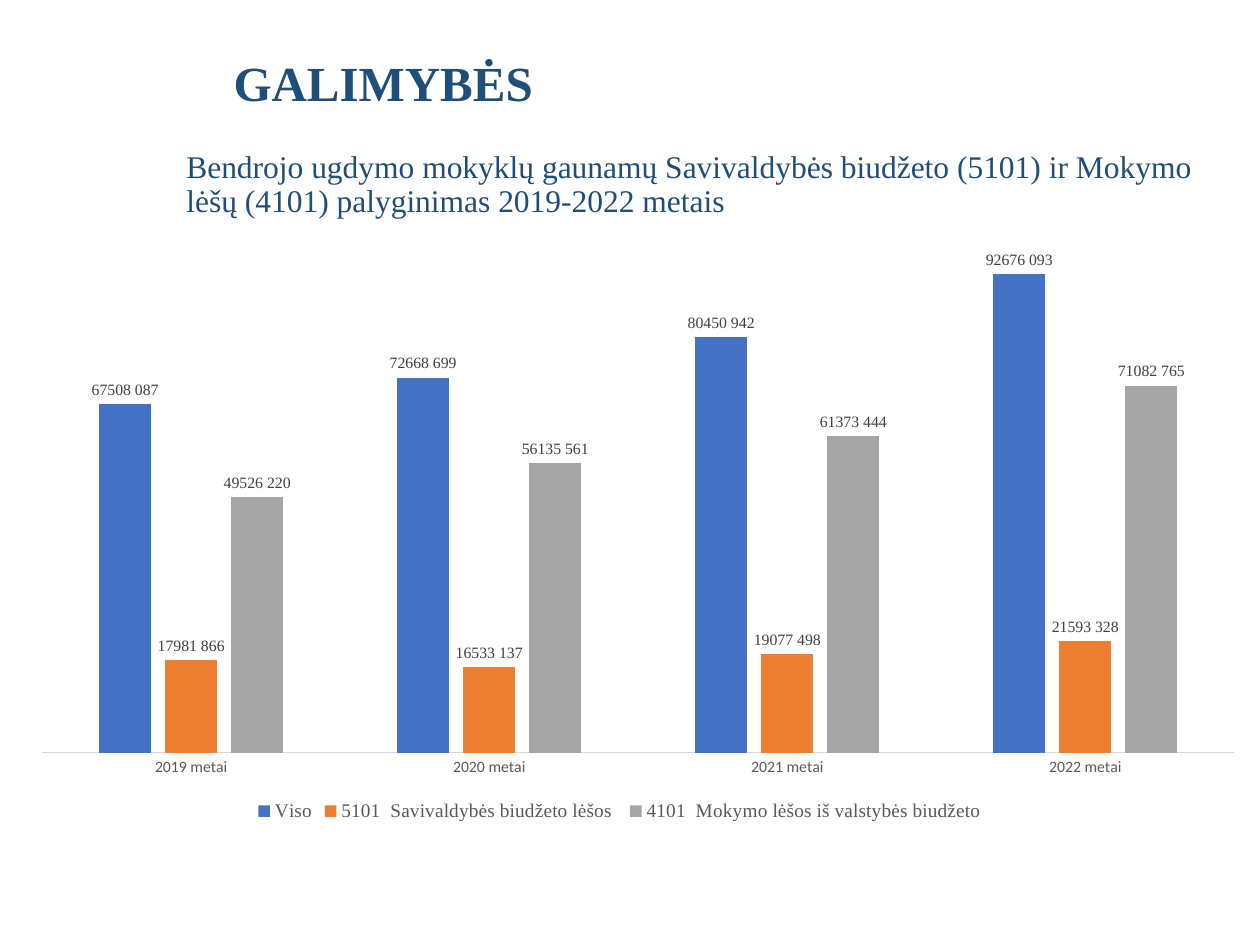
from lxml.etree import SubElement
from pptx import Presentation
from pptx.chart.data import CategoryChartData
from pptx.dml.color import RGBColor
from pptx.enum.chart import XL_CHART_TYPE, XL_LABEL_POSITION, XL_LEGEND_POSITION, XL_TICK_MARK
from pptx.enum.text import MSO_ANCHOR
from pptx.oxml.ns import qn
from pptx.util import Pt

COLORS = {
    "title": "1F4E79",
    "text": "000000",
    "label": "404040",
    "muted": "595959",
    "axis": "D9D9D9",
}
SERIF, SANS = "Times New Roman", "Calibri"
NUMBER_FORMAT = r"[$-10427]#\ ##0;\-#\ ##0"

CATEGORIES = [f"{year} metai" for year in range(2019, 2023)]
SERIES = [
    ("Viso", "4472C4", (67508087, 72668699, 80450942, 92676093)),
    ("5101  Savivaldybės biudžeto lėšos ", "ED7D31", (17981866, 16533137, 19077498, 21593328)),
    ("4101  Mokymo lėšos iš valstybės biudžeto", "A5A5A5", (49526220, 56135561, 61373444, 71082765)),
]


def rgb(name):
    return RGBColor.from_string(COLORS.get(name, name))


def style_font(font, name, size, color, bold=False):
    font.name = name
    font.size = Pt(size)
    font.bold = bold
    font.color.rgb = rgb(color)


def add_heading(slide, left, top, width, height):
    """Bold heading, indented, with a plain subtitle below it."""
    frame = slide.shapes.add_textbox(Pt(left), Pt(top), Pt(width), Pt(height)).text_frame
    frame.word_wrap = True
    frame.vertical_anchor = MSO_ANCHOR.TOP
    frame.margin_top = Pt(19)

    heading = frame.paragraphs[0]
    heading._p.get_or_add_pPr().set("marL", str(Pt(27)))
    subtitle = frame.add_paragraph()
    subtitle.space_before = Pt(22)
    lines = [
        (heading, "GALIMYBĖS", 28, True),
        (subtitle, "Bendrojo ugdymo mokyklų gaunamų Savivaldybės biudžeto (5101) "
                   "ir Mokymo lėšų (4101) palyginimas 2019-2022 metais", 18, False),
    ]
    for paragraph, text, size, bold in lines:
        paragraph.line_spacing = 0.9
        run = paragraph.add_run()
        run.text = text
        style_font(run.font, SERIF, size, "title", bold)


def set_plot_layout(chart, x, y, w, h):
    """Fix the inner plot area as fractions of the chart."""
    plot_area = chart._chartSpace.chart.plotArea
    layout = plot_area.find(qn("c:layout"))
    if layout is None:
        layout = SubElement(plot_area, qn("c:layout"))
        plot_area.insert(0, layout)
    manual = SubElement(layout, qn("c:manualLayout"))
    settings = [("layoutTarget", "inner"), ("xMode", "edge"), ("yMode", "edge"),
                ("x", x), ("y", y), ("w", w), ("h", h)]
    for tag, value in settings:
        SubElement(manual, qn(f"c:{tag}")).set("val", str(value))


def add_budget_chart(slide, left, top, width, height):
    """Clustered columns with value labels and a legend below."""
    data = CategoryChartData(number_format=NUMBER_FORMAT)
    data.categories = CATEGORIES
    for name, _, values in SERIES:
        data.add_series(name, values)
    chart = slide.shapes.add_chart(
        XL_CHART_TYPE.COLUMN_CLUSTERED, Pt(left), Pt(top), Pt(width), Pt(height), data
    ).chart
    chart.has_title = False
    style_font(chart.font, SANS, 10, "text")
    set_plot_layout(chart, 0.03, 0.04, 0.97, 0.84)

    # Columns and their labels
    plot = chart.plots[0]
    plot.vary_by_categories = False
    plot.gap_width = 219
    plot.overlap = -27
    for series, (_, color, _) in zip(plot.series, SERIES):
        series.format.fill.solid()
        series.format.fill.fore_color.rgb = rgb(color)
        labels = series.data_labels
        labels.show_value = True
        labels.position = XL_LABEL_POSITION.OUTSIDE_END
        labels.number_format = NUMBER_FORMAT
        labels.number_format_is_linked = False
        style_font(labels.font, SERIF, 9, "label")

    # Axes
    category_axis = chart.category_axis
    category_axis.major_tick_mark = XL_TICK_MARK.NONE
    category_axis.format.line.color.rgb = rgb("axis")
    category_axis.format.line.width = Pt(0.75)
    style_font(category_axis.tick_labels.font, SANS, 9, "muted")
    value_axis = chart.value_axis
    value_axis.minimum_scale = 0
    value_axis.maximum_scale = 100_000_000
    value_axis.has_major_gridlines = False
    value_axis.visible = False

    # Legend
    chart.has_legend = True
    chart.legend.position = XL_LEGEND_POSITION.BOTTOM
    chart.legend.include_in_layout = False
    style_font(chart.legend.font, SERIF, 11, "muted")


def main():
    presentation = Presentation()
    presentation.slide_width = Pt(720)
    presentation.slide_height = Pt(540)
    slide = presentation.slides.add_slide(presentation.slide_layouts[6])
    add_heading(slide, 99.4, 15, 615, 136)
    add_budget_chart(slide, 3, 121, 702.7, 351.4)
    presentation.save("out.pptx")


if __name__ == "__main__":
    main()
